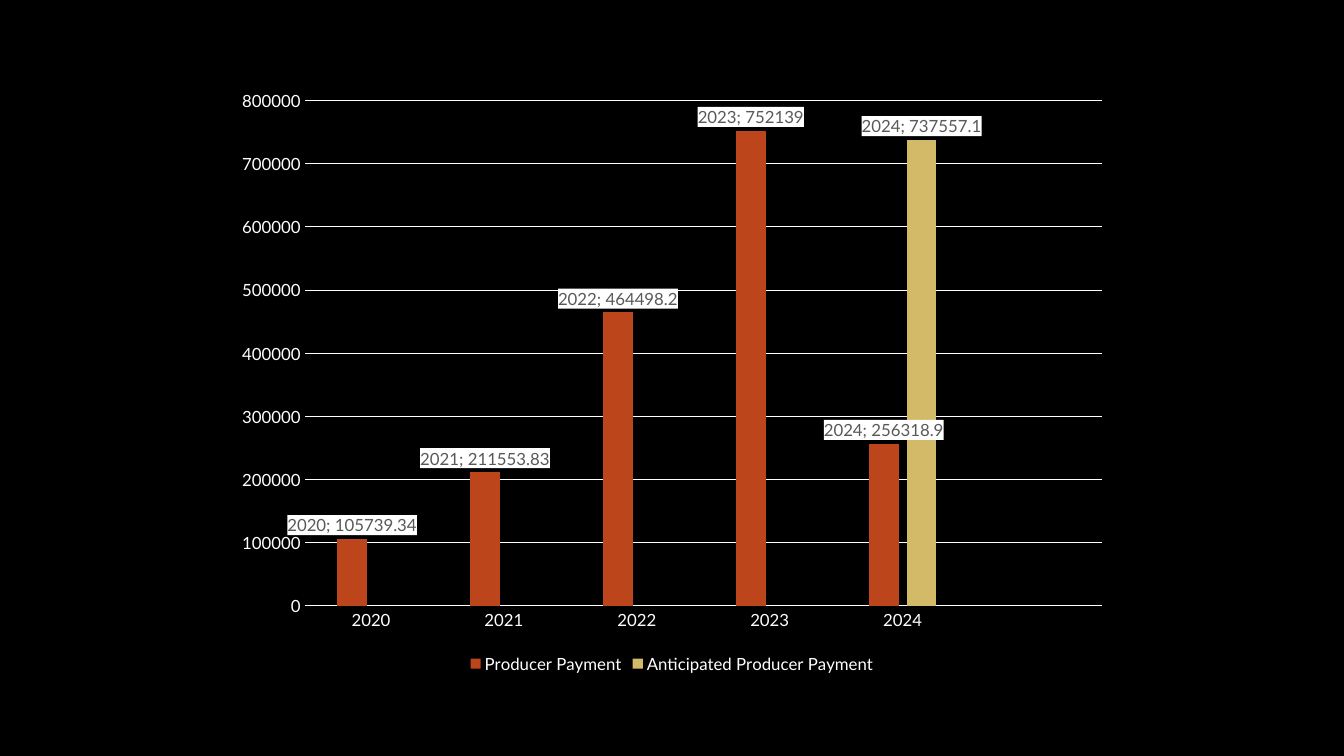
from pptx import Presentation
from pptx.chart.data import CategoryChartData
from pptx.dml.color import RGBColor
from pptx.enum.chart import XL_CHART_TYPE, XL_LABEL_POSITION, XL_LEGEND_POSITION, XL_TICK_MARK
from pptx.oxml import parse_xml
from pptx.oxml.ns import nsdecls, qn
from pptx.util import Pt

COLUMN = XL_CHART_TYPE.COLUMN_CLUSTERED
ABOVE = XL_LABEL_POSITION.OUTSIDE_END
BOTTOM = XL_LEGEND_POSITION.BOTTOM
NO_TICK = XL_TICK_MARK.NONE

BLACK = RGBColor(0x00, 0x00, 0x00)
WHITE = RGBColor(0xFF, 0xFF, 0xFF)
GRAY = RGBColor(0x59, 0x59, 0x59)
RUST = RGBColor(0xBC, 0x45, 0x1B)
GOLD = RGBColor(0xD3, 0xBA, 0x68)

YEARS = ["2020", "2021", "2022", "2023", "2024", ""]
PAYMENTS = [
    ("Producer Payment", RUST, [105739.34, 211553.83, 464498.2, 752139, 256318.9, None]),
    ("Anticipated Producer Payment", GOLD, [None, None, None, None, 737557.1, None]),
]


class Deck:
    face = "Lato"
    size = 12

    def __init__(self):
        self.show = Presentation()
        self.show.slide_width = Pt(960)
        self.show.slide_height = Pt(540)
        self.slide = self.show.slides.add_slide(self.show.slide_layouts[6])
        fill = self.slide.background.fill
        fill.solid()
        fill.fore_color.rgb = BLACK

    def style(self, font, color, size=None):
        font.name = self.face
        font.size = Pt(size or self.size)
        font.bold = False
        font.color.rgb = color

    def line(self, target):
        target.format.line.color.rgb = WHITE
        target.format.line.width = Pt(0.75)

    def chart(self, left, top, width, height, cats, rows):
        data = CategoryChartData()
        data.categories = cats
        for name, _, vals in rows:
            data.add_series(name, vals)
        frame = self.slide.shapes.add_chart(
            COLUMN, Pt(left), Pt(top), Pt(width), Pt(height), data)
        chart = frame.chart
        chart.has_title = False
        self.style(chart.font, WHITE, 10)
        plot = chart.plots[0]
        plot.gap_width = 219
        plot.overlap = -27
        plot.vary_by_categories = False
        for series, (_, color, _) in zip(plot.series, rows):
            series.format.fill.solid()
            series.format.fill.fore_color.rgb = color
            self.labels(series)
        self.axes(chart)
        chart.has_legend = True
        chart.legend.position = BOTTOM
        chart.legend.include_in_layout = False
        self.style(chart.legend.font, WHITE)
        return chart

    def axes(self, chart):
        for axis in (chart.category_axis, chart.value_axis):
            axis.major_tick_mark = NO_TICK
            axis.minor_tick_mark = NO_TICK
            self.style(axis.tick_labels.font, WHITE)
        self.line(chart.category_axis)
        scale = chart.value_axis
        scale.minimum_scale = 0
        scale.maximum_scale = 800000
        scale.major_unit = 100000
        scale.format.line.fill.background()
        scale.has_major_gridlines = True
        self.line(scale.major_gridlines)

    def labels(self, series):
        tags = series.data_labels
        tags.show_value = True
        tags.show_category_name = True
        tags.position = ABOVE
        self.style(tags.font, GRAY)
        node = series._element.find(qn("c:dLbls"))
        box = parse_xml(
            f'<c:spPr {nsdecls("c", "a")}><a:solidFill>'
            f'<a:srgbClr val="{WHITE}"/></a:solidFill></c:spPr>')
        node.find(qn("c:txPr")).addprevious(box)
        mark = parse_xml(f'<c:separator {nsdecls("c")}>; </c:separator>')
        last = [kid for kid in node if kid.tag.split("}")[1].startswith("show")
                and kid.tag != qn("c:showLeaderLines")][-1]
        last.addnext(mark)

    def place(self, chart, **area):
        parts = "".join(f'<c:{key}Mode val="edge"/>' for key in "xy")
        parts += "".join(f'<c:{key} val="{val}"/>' for key, val in area.items())
        node = parse_xml(
            f'<c:layout {nsdecls("c")}><c:manualLayout>'
            f'<c:layoutTarget val="inner"/>{parts}</c:manualLayout></c:layout>')
        plot = chart._chartSpace.chart.plotArea
        old = plot.find(qn("c:layout"))
        if old is not None:
            plot.remove(old)
        plot.insert(0, node)


def main():
    deck = Deck()
    chart = deck.chart(160, 57, 640, 427, YEARS, PAYMENTS)
    deck.place(chart, x=0.09, y=0.035, w=0.89, h=0.845)
    deck.show.save("out.pptx")


if __name__ == "__main__":
    main()
